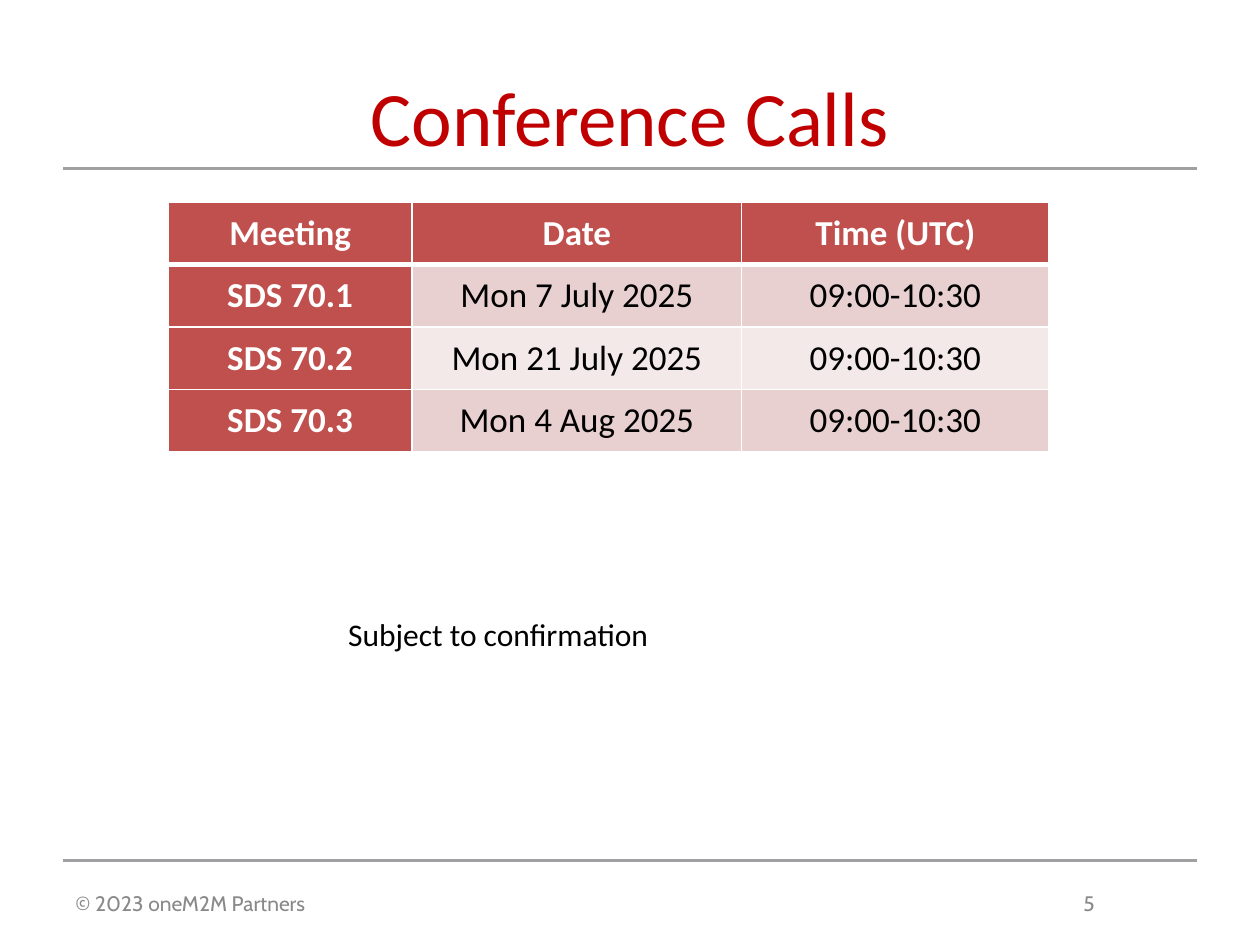
import lxml.etree
import pptx
import pptx.dml.color
import pptx.enum.shapes
import pptx.enum.text
import pptx.oxml
import pptx.oxml.ns
import pptx.util

Cm = pptx.util.Cm
Pt = pptx.util.Pt
RGBColor = pptx.dml.color.RGBColor
ALIGN = pptx.enum.text.PP_ALIGN
ANCHOR = pptx.enum.text.MSO_ANCHOR
qn = pptx.oxml.ns.qn

WHITE = RGBColor(0xFF, 0xFF, 0xFF)
BLACK = RGBColor(0x00, 0x00, 0x00)
TITLE_RED = RGBColor(0xC0, 0x00, 0x00)
HEADER_RED = RGBColor(0xC0, 0x50, 0x4D)
BAND_DARK = RGBColor(0xE8, 0xD0, 0xD0)
BAND_LIGHT = RGBColor(0xF4, 0xE9, 0xE9)
RULE_GREY = RGBColor(0xA0, 0xA0, 0xA3)
FOOTER_GREY = RGBColor(0x89, 0x89, 0x89)

CALLS = [
    ("Meeting", "Date", "Time (UTC)"),
    ("SDS 70.1", "Mon 7 July 2025", "09:00-10:30"),
    ("SDS 70.2", "Mon 21 July 2025", "09:00-10:30"),
    ("SDS 70.3", "Mon 4 Aug 2025", "09:00-10:30"),
]
COLUMN_WIDTHS = (4.92, 6.64, 6.2)


def write_text(frame, text, size=18, color=BLACK, font="Calibri", bold=False,
               align=ALIGN.LEFT, tab_stop=None):
    """Write one formatted paragraph into a text frame."""
    para = frame.paragraphs[0]
    para.alignment = align
    if tab_stop is not None:
        tabs = lxml.etree.SubElement(para._p.get_or_add_pPr(), qn("a:tabLst"))
        lxml.etree.SubElement(tabs, qn("a:tab"), pos=str(tab_stop), algn="l")
    span = para.add_run()
    span.text = text
    span.font.name = font
    span.font.size = Pt(size)
    span.font.bold = bold
    span.font.color.rgb = color


def add_text_box(page, left, top, width, height, text, anchor=ANCHOR.TOP, wrap=True, **style):
    """Add a text box holding one paragraph."""
    box = page.shapes.add_textbox(left, top, width, height)
    box.text_frame.word_wrap = wrap
    box.text_frame.vertical_anchor = anchor
    write_text(box.text_frame, text, **style)


def add_rule(page, left, top, width):
    """Draw a grey horizontal rule."""
    rule = page.shapes.add_connector(
        pptx.enum.shapes.MSO_CONNECTOR.STRAIGHT, left, top, left + width, top)
    rule.line.color.rgb = RULE_GREY
    rule.line.width = Pt(1.75)
    lxml.etree.SubElement(rule._element.spPr, qn("a:effectLst"))


def set_borders(cell, **widths):
    """Give a cell white borders, with widths in points by side."""
    properties = cell._tc.get_or_add_tcPr()
    for index, (side, width) in enumerate(widths.items()):
        border = lxml.etree.Element(qn(f"a:ln{side}"), w=str(Pt(width)))
        fill = lxml.etree.SubElement(border, qn("a:solidFill"))
        lxml.etree.SubElement(fill, qn("a:srgbClr"), val=str(WHITE))
        properties.insert(index, border)


def add_header(page, left, top, width, height):
    """Place the title and the rule below it."""
    add_rule(page, left, top + Cm(2.12), width)
    add_text_box(page, left, top, width, height, "Conference Calls",
                 size=44, color=TITLE_RED, align=ALIGN.CENTER)


def add_footer(page, left, top, width, height):
    """Place the copyright line and page number under a rule."""
    add_rule(page, left, top, width)
    add_text_box(page, left, top, width, height, "© 2023 oneM2M Partners\t5",
                 anchor=ANCHOR.MIDDLE, size=12, color=FOOTER_GREY, font="Cabin",
                 tab_stop=Cm(20.32))


def add_schedule(page, left, top, width, height):
    """Place the table of calls, with a red header row and first column."""
    table = page.shapes.add_table(
        len(CALLS), len(COLUMN_WIDTHS), left, top, width, height).table
    for column, column_width in zip(table.columns, COLUMN_WIDTHS):
        column.width = Cm(column_width)
    for i, row in enumerate(CALLS):
        for j, text in enumerate(row):
            cell = table.cell(i, j)
            heading = i == 0 or j == 0
            band = BAND_DARK if i % 2 else BAND_LIGHT
            cell.fill.solid()
            cell.fill.fore_color.rgb = HEADER_RED if heading else band
            cell.vertical_anchor = ANCHOR.MIDDLE
            cell.margin_left = cell.margin_right = Cm(0.18)
            cell.margin_top = cell.margin_bottom = 0
            set_borders(cell, L=1, R=1, T=3 if i == 1 else 1, B=3 if i == 0 else 1)
            write_text(cell.text_frame, text, size=20, bold=heading,
                       color=WHITE if heading else BLACK, align=ALIGN.CENTER)


def main():
    """Build the conference calls slide."""
    deck = pptx.Presentation()
    deck.slide_width, deck.slide_height = Cm(25.4), Cm(19.05)
    page = deck.slides.add_slide(deck.slide_layouts[6])
    add_header(page, Cm(1.27), Cm(1.27), Cm(22.86), Cm(3.18))
    add_footer(page, Cm(1.27), Cm(17.35), Cm(22.86), Cm(1.7))
    add_schedule(page, Cm(3.39), Cm(4.07), Cm(17.76), Cm(5.04))
    add_text_box(page, Cm(6.77), Cm(12.28), Cm(6.77), Cm(1.03),
                 "Subject to confirmation", wrap=False)
    deck.save("out.pptx")


if __name__ == "__main__":
    main()
